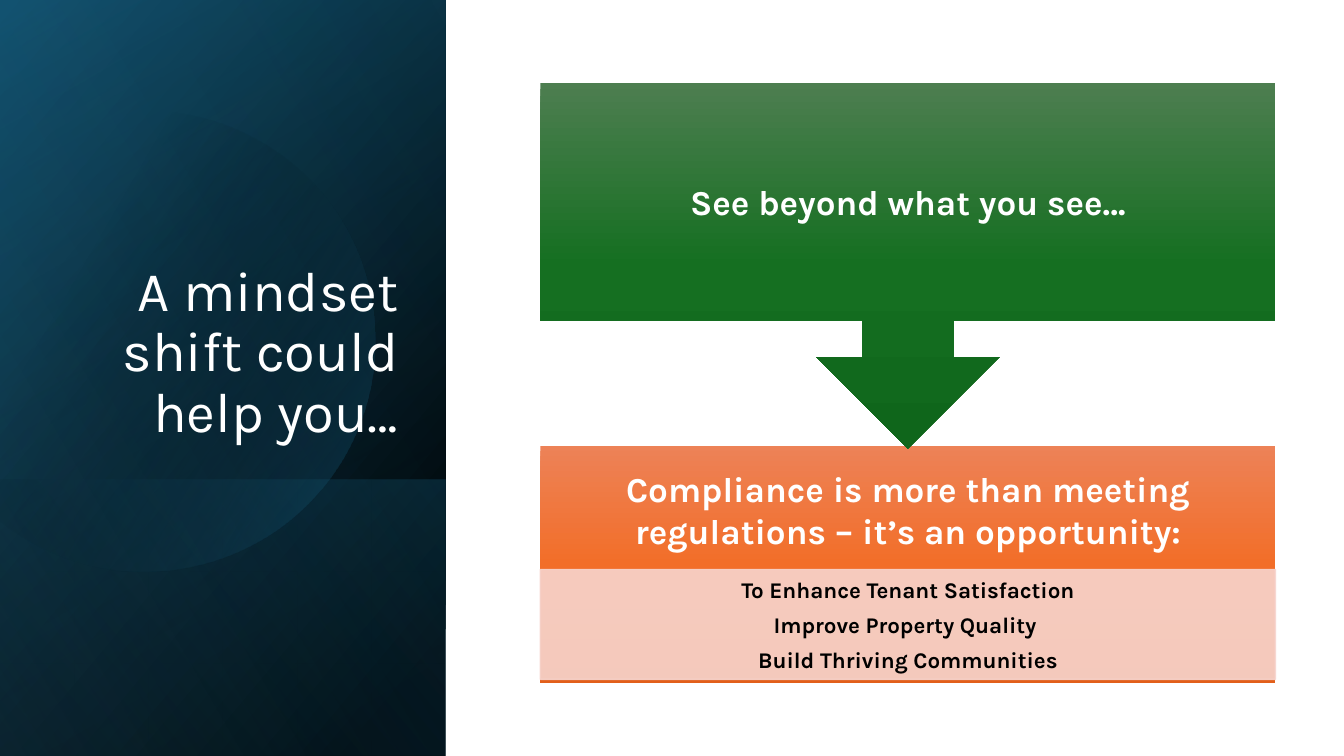
from dataclasses import dataclass

from lxml import etree
from pptx import Presentation
from pptx.dml.color import RGBColor
from pptx.enum.shapes import MSO_SHAPE
from pptx.enum.text import MSO_ANCHOR, PP_ALIGN
from pptx.oxml.ns import qn
from pptx.util import Inches, Pt

RECTANGLE = MSO_SHAPE.RECTANGLE
CALLOUT = MSO_SHAPE.DOWN_ARROW_CALLOUT
MIDDLE, BOTTOM = MSO_ANCHOR.MIDDLE, MSO_ANCHOR.BOTTOM
CENTER, RIGHT = PP_ALIGN.CENTER, PP_ALIGN.RIGHT
TITLE_ONLY_LAYOUT = 5


@dataclass(frozen=True)
class Theme:
    font: str = "Karla"
    title_size: int = 40
    heading_size: int = 25
    list_size: int = 16
    white: str = "FFFFFF"
    black: str = "000000"
    navy: str = "104862"
    teal: str = "156082"
    sky: str = "46B1E1"
    blush: str = "F7D5CE"
    # Gradient stops: position, colour, opacity (all in percent)
    green: tuple = ((0, "4D7E50", 100), (50, "156F21", 100), (100, "0F661B", 100))
    orange: tuple = ((0, "ED8257", 100), (50, "F26E29", 100), (100, "E25F1A", 100))


THEME = Theme()
PANEL_WIDTH, SLIDE_HEIGHT = 4.42, 7.5
BOX_LEFT, BOX_WIDTH = 5.36, 7.29


def set_opacity(color_element, percent):
    alpha = etree.SubElement(color_element, qn("a:alpha"))
    alpha.set("val", str(percent * 1000))


def fill_gradient(shape, stops, angle):
    shape.fill.gradient()
    gradient = shape.fill._xPr.find(qn("a:gradFill"))
    stop_list = gradient.find(qn("a:gsLst"))
    for old_stop in list(stop_list):
        stop_list.remove(old_stop)
    for position, color, opacity in stops:
        stop = etree.SubElement(stop_list, qn("a:gs"), pos=str(position * 1000))
        color_element = etree.SubElement(stop, qn("a:srgbClr"), val=color)
        if opacity < 100:
            set_opacity(color_element, opacity)
    gradient.find(qn("a:lin")).set("ang", str(angle * 60000))


def fill_solid(shape, color, opacity):
    shape.fill.solid()
    shape.fill.fore_color.rgb = RGBColor.from_string(color)
    set_opacity(shape.fill._xPr.find(".//" + qn("a:srgbClr")), opacity)


def add_block(slide, kind, left, top, width, height):
    shape = slide.shapes.add_shape(
        kind, Inches(left), Inches(top), Inches(width), Inches(height))
    shape.shadow.inherit = False
    shape.line.fill.background()
    return shape


def write_text(shape, *lines, size, color, bold=False, align=CENTER, anchor=MIDDLE,
               margins=(0.1, 0.05, 0.1, 0.05), space_after=0, line_spacing=1.0):
    frame = shape.text_frame
    frame.word_wrap = True
    frame.vertical_anchor = anchor
    (frame.margin_left, frame.margin_top,
     frame.margin_right, frame.margin_bottom) = map(Inches, margins)
    for index, line in enumerate(lines):
        paragraph = frame.paragraphs[0] if index == 0 else frame.add_paragraph()
        paragraph.alignment = align
        paragraph.space_before = Pt(0)
        paragraph.space_after = Pt(space_after)
        paragraph.line_spacing = line_spacing
        run = paragraph.add_run()
        run.text = line
        run.font.name = THEME.font
        run.font.size = Pt(size)
        run.font.bold = bold
        run.font.color.rgb = RGBColor.from_string(color)


def add_curved_shape(slide, start, segments):
    """Closed outline; a segment is one point, or two controls and a point."""
    ends = [segment[-1] for segment in segments]
    builder = slide.shapes.build_freeform(*start, scale=Inches(1))
    builder = slide.shapes.build_freeform(
        *(Inches(value) for value in start), scale=1.0)
    builder.add_line_segments(
        [(Inches(x), Inches(y)) for x, y in ends], close=True)
    shape = builder.convert_to_shape()
    lines = list(shape._element.iter(qn("a:lnTo")))
    for line, segment in zip(lines, segments):
        if len(segment) == 1:
            continue
        curve = etree.Element(qn("a:cubicBezTo"))
        for x, y in segment:
            etree.SubElement(curve, qn("a:pt"), x=str(Inches(x) - shape.left),
                             y=str(Inches(y) - shape.top))
        line.getparent().replace(line, curve)
    shape.shadow.inherit = False
    shape.line.fill.background()
    return shape


def add_panel_layer(slide, stops, angle, top=0):
    layer = add_block(slide, RECTANGLE, 0, top, PANEL_WIDTH, SLIDE_HEIGHT - top)
    fill_gradient(layer, stops, angle)


def add_disc(slide):
    start = (1.49, 1.1)
    disc = add_curved_shape(slide, start, (
        ((2.46, 1.12), (3.35, 1.77), (3.63, 2.75)),
        ((3.98, 3.97), (3.28, 5.23), (2.07, 5.58)),
        ((1.31, 5.8), (0.53, 5.61), (-0.03, 5.14)),
        ((-0.15, 5.03),),
        ((-0.15, 1.75),),
        ((0, 1.61),),
        ((0.23, 1.42), (0.5, 1.28), (0.8, 1.19)),
        ((1.03, 1.13), (1.26, 1.1), start),
    ))
    fill_gradient(disc, ((29, THEME.black, 0), (100, THEME.teal, 43)), 30)


def add_panel(slide):
    add_panel_layer(slide, ((8, THEME.black, 100), (100, THEME.navy, 100)), 220)
    add_panel_layer(slide, ((0, THEME.black, 0), (99, THEME.teal, 46)), 240)
    add_panel_layer(slide, ((2, THEME.teal, 29), (100, THEME.black, 30)), 140, top=4.76)
    add_disc(slide)
    add_panel_layer(slide, ((0, THEME.black, 0), (99, THEME.sky, 11)), 150)


def add_title(slide):
    title = slide.shapes.title
    title.left, title.top = Inches(0.64), Inches(1.84)
    title.width, title.height = Inches(3.41), Inches(2.62)
    write_text(title, "A mindset shift could help you…", size=THEME.title_size,
               color=THEME.white, align=RIGHT, anchor=BOTTOM, line_spacing=0.9)
    # Bring the title in front of the panel
    slide.shapes._spTree.append(title._element)


def add_opportunity(slide):
    heading = add_block(slide, RECTANGLE, BOX_LEFT, 4.42, BOX_WIDTH, 2.36)
    fill_gradient(heading, THEME.orange, 90)
    write_text(heading, "Compliance is more than meeting regulations – it’s an opportunity:",
               size=THEME.heading_size, color=THEME.white, bold=True,
               margins=(0.19, 0.19, 0.19, 1.28), space_after=8.75)

    benefits = add_block(slide, RECTANGLE, BOX_LEFT, 5.65, BOX_WIDTH, 1.09)
    fill_solid(benefits, THEME.blush, 90)
    fill_solid(benefits.line, THEME.blush, 90)
    benefits.line.width = Pt(1)
    write_text(benefits, "To Enhance Tenant Satisfaction", "Improve Property Quality ",
               "Build Thriving Communities", size=THEME.list_size, color=THEME.black,
               bold=True, margins=(0.12, 0.02, 0.12, 0.02), space_after=5.6)


def add_callout(slide):
    callout = add_block(slide, CALLOUT, BOX_LEFT, 0.82, BOX_WIDTH, 3.63)
    fill_gradient(callout, THEME.green, 90)
    write_text(callout, "See beyond what you see…", size=THEME.heading_size,
               color=THEME.white, bold=True, margins=(0.19,) * 4, space_after=8.75)


def main():
    presentation = Presentation()
    presentation.slide_width = Inches(13.33)
    presentation.slide_height = Inches(SLIDE_HEIGHT)
    slide = presentation.slides.add_slide(presentation.slide_layouts[TITLE_ONLY_LAYOUT])
    add_panel(slide)
    add_title(slide)
    add_opportunity(slide)
    add_callout(slide)
    presentation.save("out.pptx")


if __name__ == "__main__":
    main()
